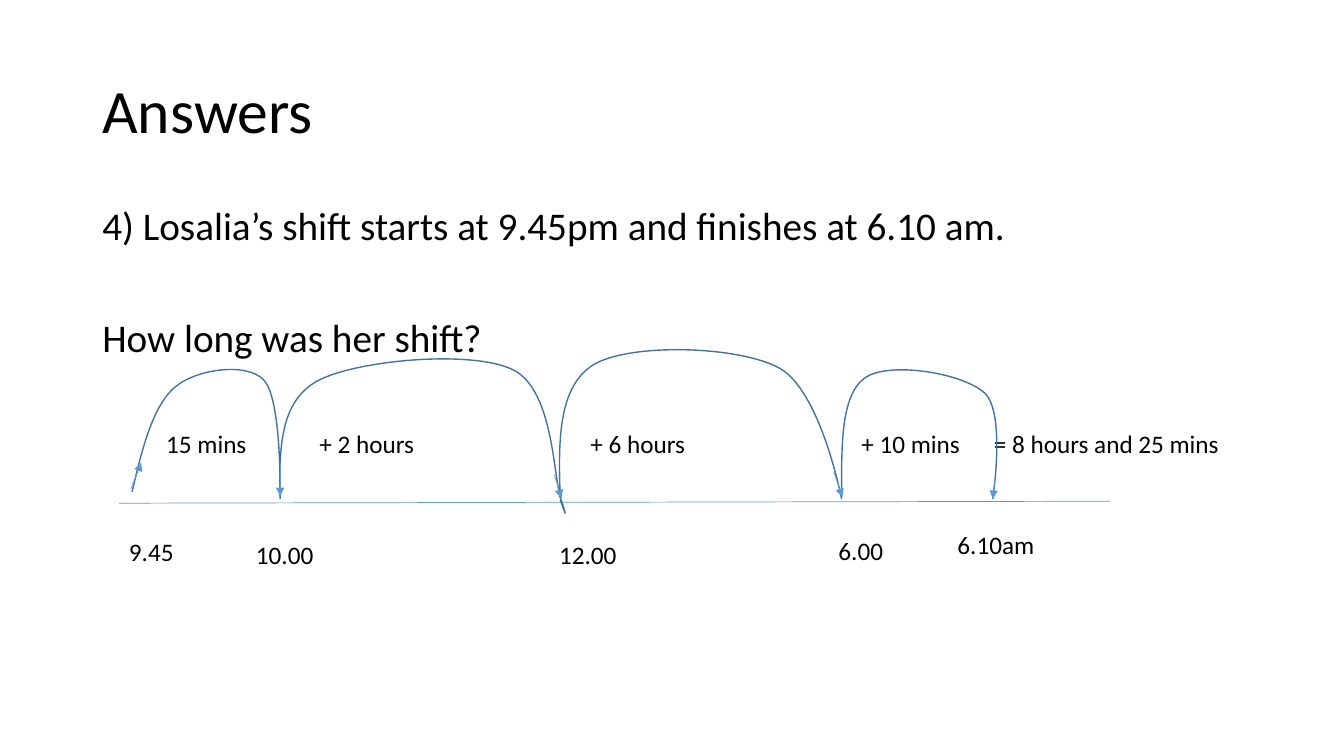
from lxml.etree import SubElement
from pptx import Presentation
from pptx.dml.color import RGBColor
from pptx.enum.shapes import MSO_CONNECTOR
from pptx.enum.text import MSO_ANCHOR, MSO_AUTO_SIZE
from pptx.oxml.ns import qn
from pptx.util import Cm, Pt

BLACK = RGBColor(0x00, 0x00, 0x00)
LIGHT_BLUE = RGBColor(0x5B, 0x9B, 0xD5)
DARK_BLUE = RGBColor(0x43, 0x73, 0x9E)

TIMES = [
    ("9.45", 3.0, 13.39, 1.65),
    ("10.00", 6.2, 13.46, 1.98),
    ("12.00", 13.84, 13.46, 1.98),
    ("6.00", 20.88, 13.36, 1.65),
    ("6.10am", 23.88, 13.21, 2.46),
]
DURATIONS = ["15 mins", "+ 2 hours", "+ 6 hours", "+ 10 mins", "= 8 hours and 25 mins"]
DURATION_TABS = [3.86, 10.69, 17.52, 20.86]
JUMPS = [
    ((3.33, 9.3, 3.73, 3.27),
     [(3.33, 12.4), (3.58, 11.3), (3.86, 10.21), (4.42, 9.75), (4.95, 9.3),
      (6.22, 9.12), (6.65, 9.58), (7.11, 10.06), (7.06, 12.57), (7.06, 12.57)]),
    ((7.06, 9.04, 7.19, 3.89),
     [(7.06, 12.5), (7.04, 11.33), (7.04, 10.13), (8.0, 9.6), (8.99, 9.07),
      (11.91, 8.81), (12.93, 9.32), (13.97, 9.83), (13.94, 12.09), (14.15, 12.62),
      (14.33, 13.18), (14.22, 12.88), (14.12, 12.6)]),
    ((14.1, 8.81, 7.11, 3.76),
     [(14.12, 12.55), (14.07, 11.15), (14.05, 9.75), (14.96, 9.19), (15.88, 8.64),
      (18.59, 8.71), (19.63, 9.27), (20.68, 9.83), (21.21, 12.57), (21.21, 12.57)]),
    ((21.21, 9.32, 3.91, 3.25),
     [(21.21, 12.52), (21.21, 11.25), (21.18, 9.98), (21.79, 9.53), (22.38, 9.09),
      (24.28, 9.4), (24.82, 9.91), (25.35, 10.41), (25.02, 12.57), (25.02, 12.57)]),
]
ARROWS = [
    (7.06, 11.66, 7.06, 12.5),
    (13.97, 11.96, 14.15, 12.55),
    (21.01, 11.89, 21.23, 12.52),
    (25.07, 12.09, 25.02, 12.57),
    (3.3, 12.32, 3.56, 11.66),
]


def add_text(shapes, text, left, top, width, height, size, wrap=True, grow=False):
    shape = shapes.add_textbox(Cm(left), Cm(top), Cm(width), Cm(height))
    text_frame = shape.text_frame
    text_frame.word_wrap = wrap
    text_frame.auto_size = MSO_AUTO_SIZE.SHAPE_TO_FIT_TEXT if grow else MSO_AUTO_SIZE.NONE
    text_frame.text = text
    for paragraph in text_frame.paragraphs:
        for run in paragraph.runs:
            run.font.name = "Calibri"
            run.font.size = Pt(size)
            run.font.color.rgb = BLACK
    return text_frame


def add_tab_stops(paragraph, positions):
    tab_list = SubElement(paragraph._p.get_or_add_pPr(), qn("a:tabLst"))
    for position in positions:
        SubElement(tab_list, qn("a:tab"), pos=str(Cm(position)), algn="l")


def add_line(shapes, start_x, start_y, end_x, end_y, arrow=False):
    connector = shapes.add_connector(
        MSO_CONNECTOR.STRAIGHT, Cm(start_x), Cm(start_y), Cm(end_x), Cm(end_y))
    connector.line.color.rgb = LIGHT_BLUE
    connector.line.width = Pt(0.5)
    if arrow:
        SubElement(connector.line._get_or_add_ln(), qn("a:tailEnd"), type="triangle")
    SubElement(connector._element.spPr, qn("a:effectLst"))


def add_jump(shapes, box, points):
    left, top, width, height = box
    builder = shapes.build_freeform(Cm(left), Cm(top))
    builder.add_line_segments([(Cm(left + width), Cm(top + height))], close=False)
    shape = builder.convert_to_shape()
    outline = next(shape._element.iter(qn("a:path")))
    for command in list(outline):
        outline.remove(command)
    command = SubElement(outline, qn("a:moveTo"))
    for index, (x, y) in enumerate(points):
        if index % 3 == 1:
            command = SubElement(outline, qn("a:cubicBezTo"))
        SubElement(command, qn("a:pt"), x=str(Cm(x - left)), y=str(Cm(y - top)))
    shape.shadow.inherit = False
    shape.fill.background()
    shape.line.color.rgb = DARK_BLUE
    shape.line.width = Pt(1)


def main():
    presentation = Presentation()
    presentation.slide_width = Cm(33.87)
    presentation.slide_height = Cm(19.05)
    slide = presentation.slides.add_slide(presentation.slide_layouts[6])

    title = add_text(slide.shapes, "Answers", 2.33, 1.02, 29.21, 3.68, 44)
    title.vertical_anchor = MSO_ANCHOR.MIDDLE
    title.paragraphs[0].line_spacing = 0.9

    question = add_text(
        slide.shapes,
        "4) Losalia’s shift starts at 9.45pm and finishes at 6.10 am.\nHow long was her shift?",
        2.33, 5.08, 29.21, 12.09, 28)
    for paragraph, space in zip(question.paragraphs, (10, 50)):
        paragraph.line_spacing = 0.9
        paragraph.space_before = Pt(space)

    durations = add_text(
        slide.shapes, "\t".join(DURATIONS), 3.94, 10.67, 28.68, 1.02, 18, grow=True)
    add_tab_stops(durations.paragraphs[0], DURATION_TABS)

    timeline = slide.shapes.add_group_shape().shapes
    add_line(timeline, 3.0, 12.68, 27.97, 12.63)
    for time, left, top, width in TIMES:
        add_text(timeline, time, left, top, width, 1.02, 18, wrap=False, grow=True)
    for box, points in JUMPS:
        add_jump(timeline, box, points)
    for ends in ARROWS:
        add_line(timeline, *ends, arrow=True)

    presentation.save("out.pptx")


if __name__ == "__main__":
    main()
